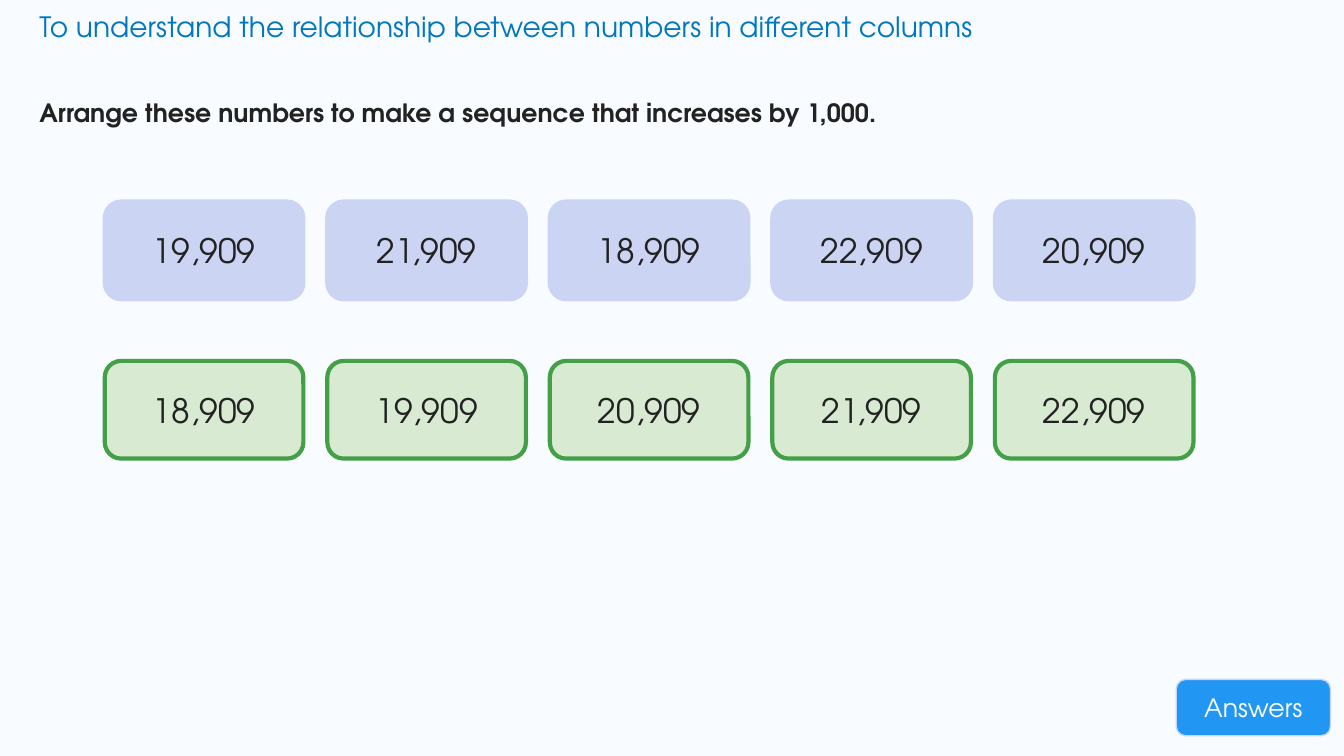
from lxml import etree
from pptx import Presentation
from pptx.dml.color import RGBColor
from pptx.enum.shapes import MSO_SHAPE
from pptx.enum.text import MSO_ANCHOR, MSO_AUTO_SIZE, PP_ALIGN
from pptx.oxml.ns import qn
from pptx.util import Pt

ROUNDED = MSO_SHAPE.ROUNDED_RECTANGLE
TOP, MIDDLE = MSO_ANCHOR.TOP, MSO_ANCHOR.MIDDLE
LEFT, CENTER = PP_ALIGN.LEFT, PP_ALIGN.CENTER
NO_AUTOFIT = MSO_AUTO_SIZE.NONE

BACKGROUND = RGBColor(0xF8, 0xFB, 0xFF)
HEADING_BLUE = RGBColor(0x02, 0x77, 0xBD)
INK = RGBColor(0x22, 0x22, 0x22)
LILAC = RGBColor(0xCC, 0xD4, 0xF4)
PALE_GREEN = RGBColor(0xD9, 0xEA, 0xD3)
GREEN = RGBColor(0x43, 0xA0, 0x47)
BUTTON_BLUE = RGBColor(0x21, 0x96, 0xF3)
WHITE = RGBColor(0xFF, 0xFF, 0xFF)

FONT = "TeX Gyre Adventor"
CARD_GAP = 17.1


def write(shape, text, size, color, align, anchor, bold=False):
    tf = shape.text_frame
    frame_format = {"word_wrap": True, "auto_size": NO_AUTOFIT, "vertical_anchor": anchor,
                    "margin_left": Pt(7.2), "margin_right": Pt(7.2),
                    "margin_top": Pt(3.6), "margin_bottom": Pt(3.6)}
    for name, value in frame_format.items():
        setattr(tf, name, value)
    tf.text = text
    p = tf.paragraphs[0]
    p.alignment = align
    for name, value in {"name": FONT, "size": Pt(size), "bold": bold}.items():
        setattr(p.runs[0].font, name, value)
    p.runs[0].font.color.rgb = color
    return p


def place(shape, box):
    for name, value in zip(("left", "top", "width", "height"), box):
        setattr(shape, name, Pt(value))


def add_heading(title, box):
    place(title, box)
    write(title, "To understand the relationship between numbers in different columns",
          20, HEADING_BLUE, LEFT, TOP)


def add_instruction(body, box):
    place(body, box)
    p = write(body, "Arrange these numbers to make a sequence that increases by 1,000.",
              18, INK, LEFT, TOP, bold=True)
    p_pr = p._p.get_or_add_pPr()
    p_pr.set("marL", "0")
    p_pr.set("indent", "0")
    etree.SubElement(p_pr, qn("a:buNone"))
    p.line_spacing = 1.5
    p.space_before = Pt(0)


def add_button(slide, box, text, size, color, fill, line, line_width):
    s = slide.shapes.add_shape(ROUNDED, *map(Pt, box))
    s.shadow.inherit = False
    s.fill.solid()
    s.fill.fore_color.rgb = fill
    s.line.color.rgb = line
    s.line.width = Pt(line_width)
    write(s, text, size, color, CENTER, MIDDLE)


def add_card_row(slide, box, numbers, fill, line):
    left, top, width, height = box
    card_width = (width - CARD_GAP * (len(numbers) - 1)) / len(numbers)
    for i, number in enumerate(numbers):
        card = (left + i * (card_width + CARD_GAP), top, card_width, height)
        add_button(slide, card, f"{number:,}", 24, INK, fill, line, 3)


def main():
    prs = Presentation()
    prs.slide_width, prs.slide_height = Pt(960), Pt(540)
    slide = prs.slides.add_slide(prs.slide_layouts[1])
    slide.background.fill.solid()
    slide.background.fill.fore_color.rgb = BACKGROUND

    add_heading(slide.shapes.title, (20.9, 2.9, 888.5, 31.7))
    add_instruction(slide.placeholders[1], (20.9, 55.4, 924.5, 54))
    add_button(slide, (840.2, 485.3, 110.2, 40.3), "Answers",
               18, WHITE, BUTTON_BLUE, LILAC, 1)
    numbers = [19909, 21909, 18909, 22909, 20909]
    add_card_row(slide, (74.9, 144, 777.6, 69.8), numbers, LILAC, LILAC)
    add_card_row(slide, (74.9, 257.8, 777.6, 69.8), sorted(numbers), PALE_GREEN, GREEN)

    prs.save("out.pptx")


if __name__ == "__main__":
    main()
